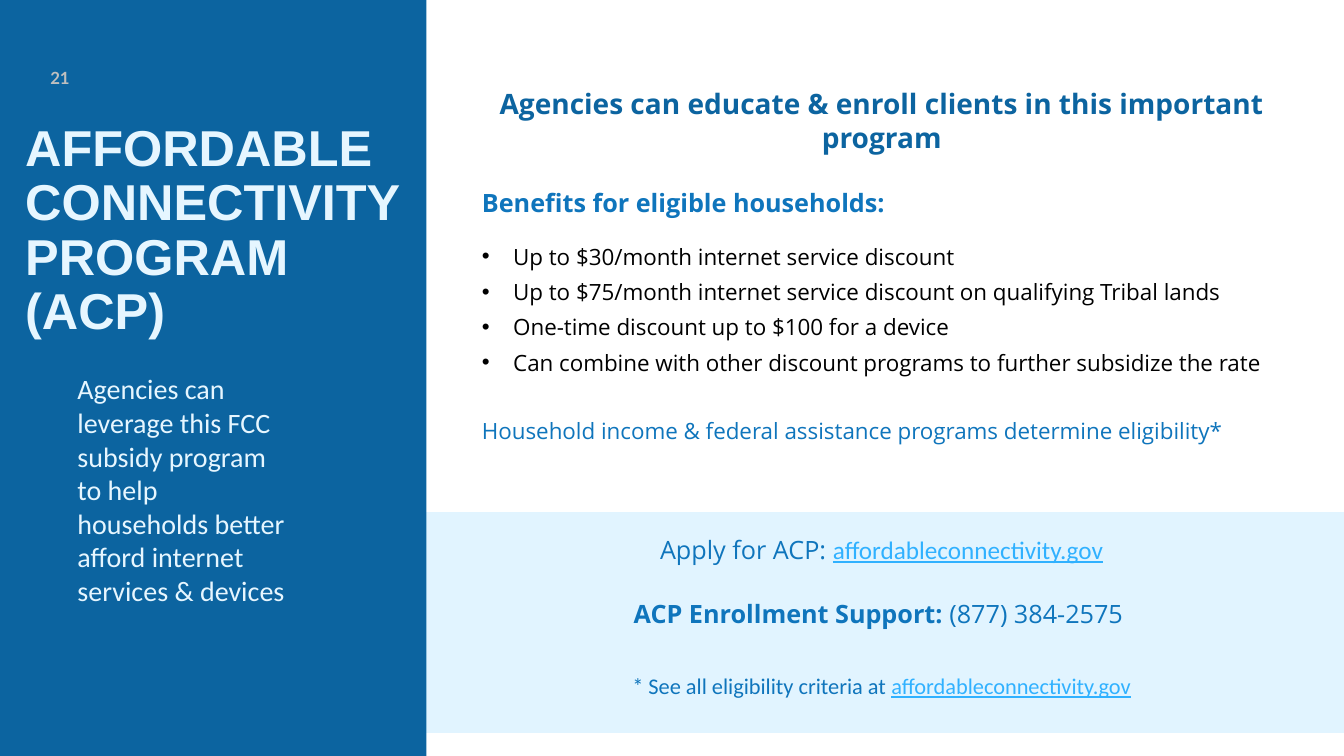
"""Build the Affordable Connectivity Program slide."""
from dataclasses import dataclass

from lxml import etree
from pptx import Presentation
from pptx.dml.color import RGBColor
from pptx.enum import shapes, text
from pptx.oxml import ns
from pptx.util import Inches, Pt

COLORS = {
    "panel": "0C64A0", "band": "C5EAFF", "pale": "E6F6FF", "number": "BFBFBF",
    "accent": "0F75BC", "link": "30B1FF", "black": "000000",
}
LEFT, CENTER = text.PP_ALIGN.LEFT, text.PP_ALIGN.CENTER
SITE = "affordableconnectivity.gov"


@dataclass(frozen=True)
class Run:
    """A stretch of text in one format."""
    words: str
    size: float
    color: str
    font: str = "Open Sans"
    bold: bool = False
    underline: bool = False


@dataclass(frozen=True)
class Para:
    """A paragraph with its spacing in points."""
    runs: tuple[Run, ...]
    align: text.PP_ALIGN = LEFT
    before: float = 0
    after: float = 0
    bullet: bool = False
    spacing: float = 1.0


@dataclass(frozen=True)
class Box:
    """A place on the slide in inches."""
    left: float
    top: float
    width: float
    height: float


@dataclass(frozen=True)
class Panel:
    """A coloured background block."""
    box: Box
    color: str
    alpha: int = 100


@dataclass(frozen=True)
class Label:
    """A free text box."""
    box: Box
    paras: tuple[Para, ...]
    anchor: text.MSO_ANCHOR = text.MSO_ANCHOR.TOP


def benefit(words: str) -> Para:
    """Return one bulleted benefit."""
    return Para((Run(words, 16, "black"),), before=6, bullet=True)


def link(size: float) -> Run:
    """Return the underlined site address."""
    return Run(SITE, size, "link", "Calibri", underline=True)


PANELS = (
    Panel(Box(1.22, 5.08, 12.11, 2.19), "band", 50),
    Panel(Box(0, 0, 4.23, 7.5), "panel"),
)
TITLE = Para((Run("AFFORDABLE CONNECTIVITY PROGRAM \n(ACP)", 36, "pale", "Arial", True),),
             spacing=0.9)
BODY = (
    Para((Run("Agencies can educate & enroll clients in this important program",
              20, "panel", bold=True),), CENTER, after=12),
    Para((Run("Benefits for eligible households:", 18, "accent", bold=True),),
         before=12, after=12),
    benefit("Up to $30/month internet service discount"),
    benefit("Up to $75/month internet service discount on qualifying Tribal lands"),
    benefit("One-time discount up to $100 for a device"),
    benefit("Can combine with other discount programs to further subsidize the rate"),
    Para((Run("Household income & federal assistance programs determine eligibility*",
              16, "accent"),), before=30, after=12),
)
NUMBER = Label(Box(0.27, 0.57, 0.65, 0.4),
               (Para((Run("21", 12, "number", "Lato", True),), CENTER),),
               text.MSO_ANCHOR.MIDDLE)
LABELS = (
    Label(Box(4.68, 6.62, 8.13, 0.37), (
        Para((Run("* See all eligibility criteria at ", 16, "accent", "Calibri"), link(16)),
             CENTER),)),
    Label(Box(4.68, 5.25, 8.13, 1.51), (
        Para((Run("Apply for ACP:\u00a0", 18, "accent"), link(18)), CENTER, after=12),
        Para((Run("ACP Enrollment Support: ", 18, "accent", bold=True),
              Run("(877) 384-2575 ", 18, "accent")), CENTER, before=12, after=12))),
    Label(Box(0.67, 3.64, 2.27, 2.46), (
        Para((Run("Agencies can leverage this FCC subsidy program to help households "
                  "better afford internet services & devices", 20, "pale", "Calibri"),)),)),
)


def place(sp, box: Box) -> None:
    """Move and size a shape."""
    sp.left, sp.top = Inches(box.left), Inches(box.top)
    sp.width, sp.height = Inches(box.width), Inches(box.height)


def set_bullet(p, bullet: bool) -> None:
    """Give a paragraph its indent and bullet."""
    pPr = p._p.get_or_add_pPr()
    indent = Inches(0.31) if bullet else 0
    pPr.set("marL", str(indent))
    pPr.set("indent", str(-indent))
    if bullet:
        etree.SubElement(pPr, ns.qn("a:buFont"), typeface="Arial")
        etree.SubElement(pPr, ns.qn("a:buChar"), char="•")
    else:
        etree.SubElement(pPr, ns.qn("a:buNone"))


def add_run(p, run: Run) -> None:
    """Add a run, breaking lines where it asks."""
    for i, line in enumerate(run.words.split("\n")):
        if i:
            p.add_line_break()
        r = p.add_run()
        r.text = line
        font = r.font
        font.name, font.size = run.font, Pt(run.size)
        font.bold, font.underline = run.bold, run.underline
        font.color.rgb = RGBColor.from_string(COLORS[run.color])


def write(tf, paras: tuple[Para, ...]) -> None:
    """Fill a text frame."""
    tf.word_wrap = True
    for i, para in enumerate(paras):
        p = tf.add_paragraph() if i else tf.paragraphs[0]
        set_bullet(p, para.bullet)
        p.alignment, p.line_spacing = para.align, para.spacing
        p.space_before, p.space_after = Pt(para.before), Pt(para.after)
        for run in para.runs:
            add_run(p, run)


def add_panel(s, panel: Panel) -> None:
    """Draw a background block."""
    sp = s.shapes.add_shape(shapes.MSO_SHAPE.RECTANGLE, 0, 0, 0, 0)
    place(sp, panel.box)
    sp.shadow.inherit = False
    sp.line.fill.background()
    sp.fill.solid()
    sp.fill.fore_color.rgb = RGBColor.from_string(COLORS[panel.color])
    if panel.alpha < 100:
        color = sp.element.spPr.find(".//" + ns.qn("a:srgbClr"))
        etree.SubElement(color, ns.qn("a:alpha"), val=str(panel.alpha * 1000))


def add_label(s, label: Label) -> None:
    """Draw a free text box."""
    sp = s.shapes.add_textbox(0, 0, 0, 0)
    place(sp, label.box)
    sp.text_frame.vertical_anchor = label.anchor
    write(sp.text_frame, label.paras)


def fill_placeholder(sp, box: Box, paras: tuple[Para, ...]) -> None:
    """Bring a placeholder to the front and fill it."""
    sp.element.getparent().append(sp.element)
    place(sp, box)
    write(sp.text_frame, paras)


def main() -> None:
    """Build and save the slide."""
    prs = Presentation()
    prs.slide_width, prs.slide_height = Inches(13.33), Inches(7.5)
    s = prs.slides.add_slide(prs.slide_layouts[1])
    for panel in PANELS:
        add_panel(s, panel)
    add_label(s, NUMBER)
    title, body = s.shapes.title, s.placeholders[1]
    fill_placeholder(title, Box(0.25, 1.06, 3.93, 2.43), (TITLE,))
    tf = title.text_frame
    tf.margin_left = tf.margin_right = tf.margin_bottom = 0
    tf.vertical_anchor = text.MSO_ANCHOR.MIDDLE
    tf.auto_size = text.MSO_AUTO_SIZE.NONE
    fill_placeholder(body, Box(4.68, 0.81, 8.13, 3.69), BODY)
    body.text_frame.auto_size = text.MSO_AUTO_SIZE.SHAPE_TO_FIT_TEXT
    for label in LABELS:
        add_label(s, label)
    prs.save("out.pptx")


if __name__ == "__main__":
    main()
